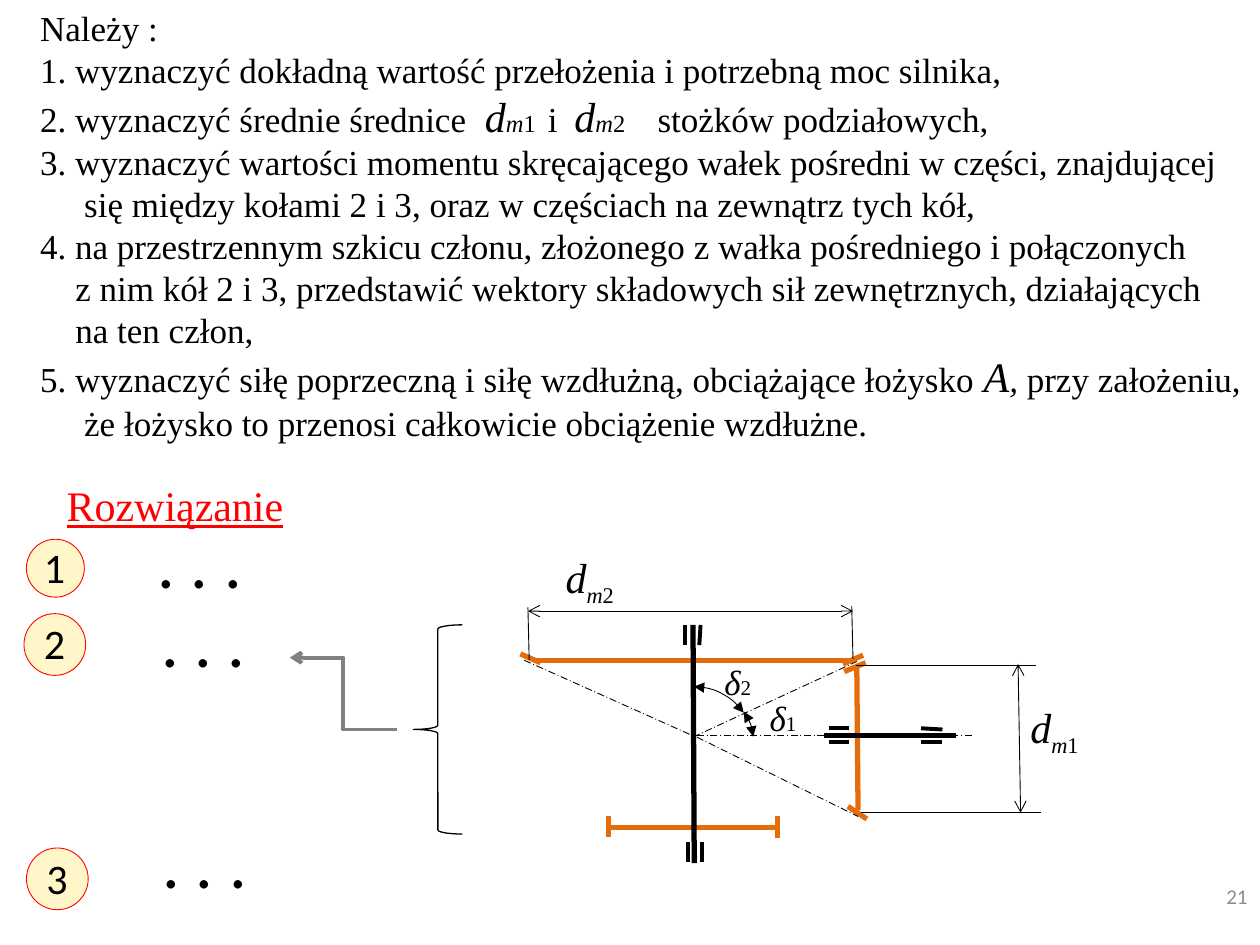
"""Builds the exercise slide with the task list, solution steps and bevel gear sketch."""
import pptx
import pptx.util
import pptx.dml.color
import pptx.enum.dml
import pptx.enum.shapes
import pptx.enum.text
import pptx.oxml.ns
import lxml.etree

PX = 9144
SERIF, SANS = "Times New Roman", "Calibri"
BLACK, RED, ORANGE, GREY = "000000", "FF0000", "E46C0A", "808080"
SHAPE = pptx.enum.shapes.MSO_SHAPE
CONN = pptx.enum.shapes.MSO_CONNECTOR
ALIGN = pptx.enum.text.PP_ALIGN
qn = pptx.oxml.ns.qn


def rgb(value):
    return pptx.dml.color.RGBColor.from_string(value)


def add_text(box, paragraphs, font=SERIF, size=20, color=BLACK, underline=None,
             align=None, anchor=pptx.enum.text.MSO_ANCHOR.TOP):
    tf = s.shapes.add_textbox(*[v * PX for v in box]).text_frame
    tf.word_wrap = True
    tf.vertical_anchor = anchor
    for i, (indent, tabs, runs) in enumerate(paragraphs):
        p = tf.paragraphs[0] if i == 0 else tf.add_paragraph()
        p.alignment = align
        pPr = p._p.get_or_add_pPr()
        if indent:
            pPr.set("marL", str(indent * PX))
        if tabs:
            tab_list = lxml.etree.SubElement(pPr, qn("a:tabLst"))
            for stop in tabs:
                lxml.etree.SubElement(tab_list, qn("a:tab"), pos=str(stop * PX), algn="l")
        for words, run_size, italic, baseline in runs:
            r = p.add_run()
            r.text = words
            r.font.name = font
            r.font.size = pptx.util.Pt(run_size or size)
            r.font.italic = italic
            r.font.underline = underline
            r.font.color.rgb = rgb(color)
            if baseline:
                r._r.get_or_add_rPr().set("baseline", str(baseline))


prs = pptx.Presentation()
prs.slide_width, prs.slide_height = 1000 * PX, 750 * PX
s = prs.slides.add_slide(prs.slide_layouts[6])

diameters = [("2. wyznaczyć średnie średnice\t", 20, False, 0)]
for index, after in (("1", "\ti\t"), ("2", "\tstożków podziałowych,")):
    diameters += [("d", 24, True, 0), ("m", 14, True, 0), (index, 14, False, 0),
                  (after, 20, False, 0)]
bearing = [("5. wyznaczyć siłę poprzeczną i siłę wzdłużną, obciążające łożysko ", 20, False, 0),
           ("A", 24, True, 0), (", ", 20, True, 0), ("przy założeniu,", 20, False, 0)]
tasks = [
    (0, "Należy :"),
    (0, "1. wyznaczyć dokładną wartość przełożenia i potrzebną moc silnika,"),
    (0, diameters),
    (0, "3. wyznaczyć wartości momentu skręcającego wałek pośredni w części, znajdującej"),
    (35, "się między kołami 2 i 3, oraz w częściach na zewnątrz tych kół,"),
    (0, "4. na przestrzennym szkicu członu, złożonego z wałka pośredniego i połączonych"),
    (28, "z nim kół 2 i 3, przedstawić wektory składowych sił zewnętrznych, działających"),
    (28, "na ten człon,"),
    (0, bearing),
    (35, "że łożysko to przenosi całkowicie obciążenie wzdłużne."),
]
add_text((22, 0, 978, 360),
         [(indent, (353, 403, 424, 490) if words is diameters else (),
           [(words, 20, False, 0)] if isinstance(words, str) else words)
          for indent, words in tasks])
add_text((43, 376, 301, 50), [(0, (), [("Rozwiązanie", 24, False, 0)])],
         color=RED, underline=True)

steps = [
    ("1", (21, 428, 46), (25, 425), (115, 407)),
    ("2", (19, 487, 49), (25, 485), (118, 469)),
    ("3", (21, 673, 49), (27, 672), (119, 645)),
]
for number, (x, y, d), label, dots in steps:
    sp = s.shapes.add_shape(SHAPE.OVAL, x * PX, y * PX, d * PX, d * PX)
    sp.shadow.inherit = False
    sp.fill.solid()
    sp.fill.fore_color.rgb = rgb("FFF7C9")
    sp.line.color.rgb = rgb(RED)
    sp.line.width = pptx.util.Pt(0.5)
    add_text((*label, 43, 50), [(0, (), [(number, 24, False, 0)])], font=SANS)
    add_text((*dots, 200, 77), [(0, (), [(". . .", 40, False, 0)])], font=SANS)

lines = [
    (ORANGE, 3, None, None, None, [
        (481, 657, 619, 657), (424, 524, 675, 524), (680, 530, 681, 643),
        (687, 526, 670, 533), (685, 520, 669, 527), (429, 526, 413, 519),
        (688, 650, 673, 640), (483, 648, 483, 664), (617, 648, 617, 665)]),
    (BLACK, 3, None, None, None, [(550, 496, 551, 685), (654, 584, 759, 584)]),
    (BLACK, 0.5, pptx.enum.dml.MSO_LINE.LONG_DASH_DOT, None, None, [
        (553, 584, 772, 584), (550, 585, 680, 525), (553, 585, 681, 648),
        (416, 524, 550, 584)]),
    (BLACK, 2.25, None, None, None, [
        (544, 496, 544, 512), (556, 496, 555, 512), (546, 668, 546, 684),
        (557, 668, 557, 684), (674, 589, 658, 589), (674, 578, 658, 578),
        (748, 579, 731, 578), (748, 589, 731, 589)]),
    (BLACK, 0.5, None, None, None, [
        (679, 528, 822, 528), (683, 645, 826, 645), (677, 523, 676, 481),
        (420, 524, 419, 482)]),
    (BLACK, 0.5, None, "arrow", "arrow", [(808, 527, 810, 645), (419, 485, 677, 485)]),
    (GREY, 2.25, None, None, "arrow", [(315, 579, 230, 522)]),
]
for color, width, dash, head, tail, segments in lines:
    kind = CONN.ELBOW if color == GREY else CONN.STRAIGHT
    for segment in segments:
        sp = s.shapes.add_connector(kind, *[v * PX for v in segment])
        sp.line.color.rgb = rgb(color)
        sp.line.width = pptx.util.Pt(width)
        if dash:
            sp.line.dash_style = dash
        ln = sp.line._get_or_add_ln()
        for tag, end in (("a:headEnd", head), ("a:tailEnd", tail)):
            if end:
                lxml.etree.SubElement(ln, qn(tag), type=end)
        lxml.etree.SubElement(sp._element.spPr, qn("a:effectLst"))

outlines = [
    (SHAPE.ARC, (502, 545, 97, 97), 0.5, (270.24, 325.04)),
    (SHAPE.ARC, (520, 549, 78, 78), 0.5, (323.45, 355.17)),
    (SHAPE.LEFT_BRACE, (328, 496, 39, 166), 0.75, ()),
]
for kind, box, width, angles in outlines:
    sp = s.shapes.add_shape(kind, *[v * PX for v in box])
    sp.shadow.inherit = False
    sp.fill.background()
    sp.line.color.rgb = rgb(BLACK)
    sp.line.width = pptx.util.Pt(width)
    for i, angle in enumerate(angles):
        sp.adjustments[i] = angle * 0.6
    if angles:
        for tag in ("a:headEnd", "a:tailEnd"):
            lxml.etree.SubElement(sp.line._get_or_add_ln(), qn(tag), type="triangle")

for index, diameter_box, angle_box in (
        ("1", (808, 552, 87, 50), (601, 548, 55, 44)),
        ("2", (439, 433, 69, 50), (565, 519, 49, 44))):
    add_text(diameter_box, [(0, (), [("d", 24, True, 0), ("m", 22, True, -25000),
                                     (index, 22, False, -25000)])])
    add_text(angle_box, [(0, (), [("δ", 20, True, 0), (index, 12, False, 0)])])

add_text((936, 690, 64, 42), [(0, (), [("21", 12, False, 0)])], font=SANS, color="8C8C8C",
         align=ALIGN.RIGHT, anchor=pptx.enum.text.MSO_ANCHOR.MIDDLE)

prs.save("out.pptx")
